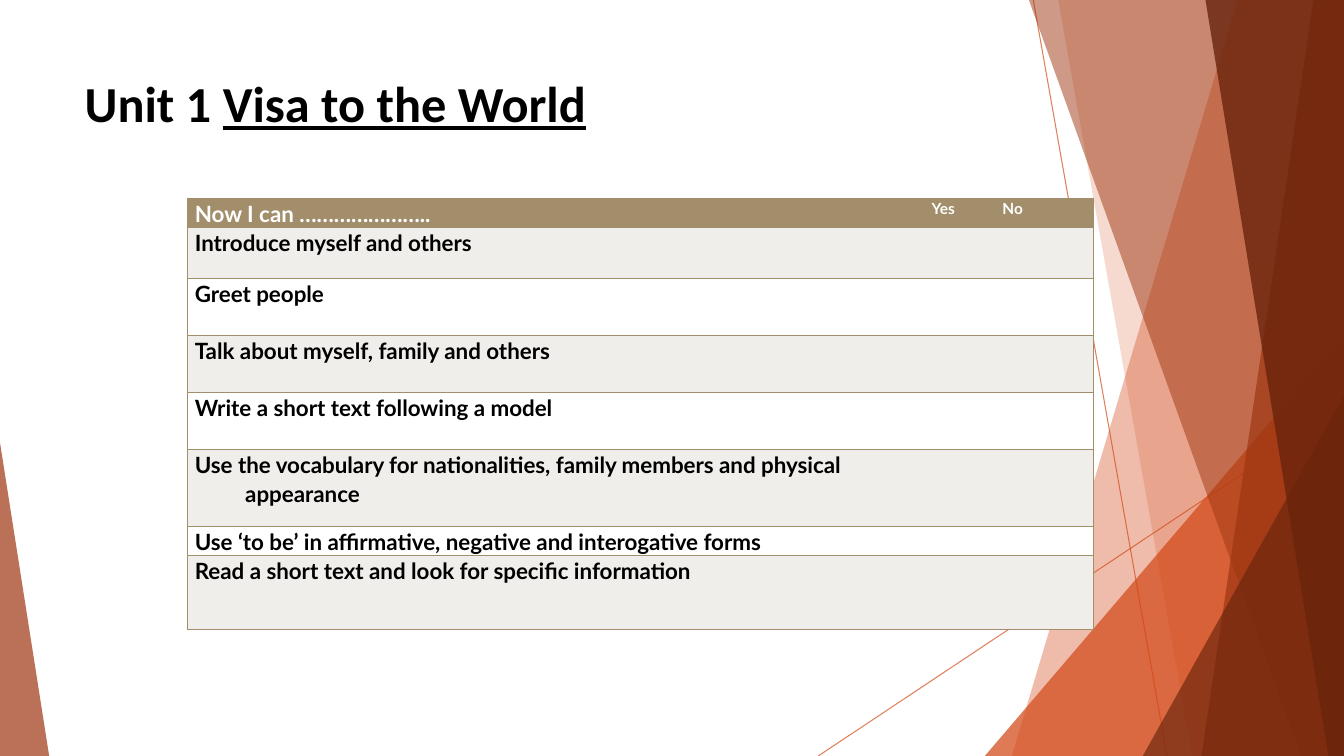
"""Build the self-assessment slide for Unit 1, with a checklist table."""
import lxml.etree
import pptx
import pptx.dml.color
import pptx.enum.shapes
import pptx.enum.text
import pptx.oxml
import pptx.oxml.ns
import pptx.util

Cm = pptx.util.Cm
RGBColor = pptx.dml.color.RGBColor
qn = pptx.oxml.ns.qn

ORANGE = RGBColor(0xD3, 0x48, 0x17)
RUST = RGBColor(0x9E, 0x36, 0x11)
BROWN = RGBColor(0x69, 0x24, 0x0C)
TAN = RGBColor(0xA2, 0x8E, 0x6A)
PALE = RGBColor(0xF0, 0xEE, 0xEB)
WHITE = RGBColor(0xFF, 0xFF, 0xFF)
BLACK = RGBColor(0x00, 0x00, 0x00)
WIDTH, HEIGHT = 33.87, 19.05


def add_text(paragraph, text, font="Lato", size=16, color=BLACK, underline=None, spacing=None, indent=0):
    paragraph.alignment = pptx.enum.text.PP_ALIGN.LEFT
    paragraph.line_spacing = spacing
    properties = paragraph._p.get_or_add_pPr()
    properties.set("marL", str(Cm(indent)))
    properties.set("indent", "0")
    if not text:
        ending = lxml.etree.SubElement(paragraph._p, qn("a:endParaRPr"))
        ending.set("sz", str(size * 100))
        return
    run = paragraph.add_run()
    run.text = text
    run.font.name = font
    run.font.size = pptx.util.Pt(size)
    run.font.bold = True
    run.font.underline = underline
    run.font.color.rgb = color


def set_opacity(formatted, percent):
    color = formatted.fore_color._xFill.find(qn("a:srgbClr"))
    lxml.etree.SubElement(color, qn("a:alpha")).set("val", str(percent * 1000))


presentation = pptx.Presentation()
presentation.slide_width = Cm(WIDTH)
presentation.slide_height = Cm(HEIGHT)
slide = presentation.slides.add_slide(presentation.slide_layouts[5])
shapes = slide.shapes

for start_x, start_y, end_x in [(26.04, 0, 29.41), (WIDTH, 10.24, 20.62)]:
    line = shapes.add_connector(
        pptx.enum.shapes.MSO_CONNECTOR.STRAIGHT, Cm(start_x), Cm(start_y), Cm(end_x), Cm(HEIGHT))
    line.line.width = pptx.util.Pt(0.75)
    line.line.color.rgb = ORANGE
    set_opacity(line.line.fill, 70)
    lxml.etree.SubElement(line._element.spPr, qn("a:effectLst"))

decorations = [
    ("band", (31.19, 25.5), ORANGE, 36),
    ("band", (26.67, 30.05), ORANGE, 20),
    ("triangle", (24.82, 8.46, 9.05, 1), ORANGE, 72),
    ("band", (25.93, 32.79), RUST, 50),
    ("band", (33.1, 30.28), RUST, 70),
    ("band", (30.38, 33.48), BROWN, 80),
    ("triangle", (28.8, 9.98, 5.07, 1), BROWN, 66),
    ("triangle", (0, 11.15, 1.24, 0), RUST, 70),
]
for kind, geometry, color, opacity in decorations:
    if kind == "band":
        top_x, bottom_x = geometry
        builder = shapes.build_freeform(Cm(top_x), 0)
        builder.add_line_segments(
            [(Cm(WIDTH), 0), (Cm(WIDTH), Cm(HEIGHT)), (Cm(bottom_x), Cm(HEIGHT))], close=True)
        shape = builder.convert_to_shape()
    else:
        left, top, width, apex = geometry
        shape = shapes.add_shape(
            pptx.enum.shapes.MSO_SHAPE.ISOSCELES_TRIANGLE, Cm(left), Cm(top), Cm(width), Cm(HEIGHT - top))
        shape.adjustments[0] = apex
    shape.shadow.inherit = False
    shape.fill.solid()
    shape.fill.fore_color.rgb = color
    set_opacity(shape.fill, opacity)
    shape.line.fill.background()

title = shapes.title
title.left, title.top, title.width, title.height = Cm(1.88), Cm(1.7), Cm(23.88), Cm(3.66)
title.text_frame.vertical_anchor = pptx.enum.text.MSO_ANCHOR.TOP
title.text_frame.word_wrap = True
heading = title.text_frame.paragraphs[0]
add_text(heading, "Unit 1 ", font="Calibri", size=36)
add_text(heading, "Visa to the World", font="Calibri", size=36, underline=True)

rows = [
    (0.73, ["Now I can ………………….."]),
    (1.28, ["Introduce myself and others"]),
    (1.44, ["Greet people"]),
    (1.44, ["Talk about myself, family and others"]),
    (1.44, ["Write a short text following a model"]),
    (1.93, ["Use the vocabulary for nationalities, family members and physical", "appearance"]),
    (0.73, ["Use ‘to be’ in affirmative, negative and interogative forms"]),
    (1.88, ["Read a short text and look for specific information"]),
]
column_widths = [18.57, 1.78, 2.49]
answers = ["Yes", "No"]
table = shapes.add_table(
    len(rows), len(column_widths), Cm(4.72), Cm(5), Cm(sum(column_widths)),
    Cm(sum(height for height, _ in rows))).table
for column, width in zip(table.columns, column_widths):
    column.width = Cm(width)

for row_index, (height, statement) in enumerate(rows):
    table.rows[row_index].height = Cm(height)
    is_header = row_index == 0
    for column_index in range(len(column_widths)):
        cell = table.cell(row_index, column_index)
        cell.margin_left = cell.margin_right = Cm(0.19)
        cell.margin_top = cell.margin_bottom = 0
        is_first = column_index == 0
        is_last = column_index == len(column_widths) - 1
        for side, visible in [("L", is_first), ("R", is_last), ("T", True), ("B", True)]:
            border = lxml.etree.SubElement(cell._tc.get_or_add_tcPr(), qn("a:ln" + side))
            border.set("w", str(pptx.util.Pt(1)))
            fill = lxml.etree.SubElement(border, qn("a:solidFill" if visible else "a:noFill"))
            if visible:
                lxml.etree.SubElement(fill, qn("a:srgbClr")).set("val", str(TAN))
        cell.fill.solid()
        cell.fill.fore_color.rgb = TAN if is_header else PALE if row_index % 2 else WHITE

        if is_first:
            texts = statement
        else:
            texts = [answers[column_index - 1] if is_header else ""]
        for text_index, text in enumerate(texts):
            frame = cell.text_frame
            paragraph = frame.add_paragraph() if text_index else frame.paragraphs[0]
            add_text(paragraph, text, size=16 if is_first else 11, color=WHITE if is_header else BLACK,
                     spacing=1.07, indent=1.27 * text_index)

presentation.save("out.pptx")
